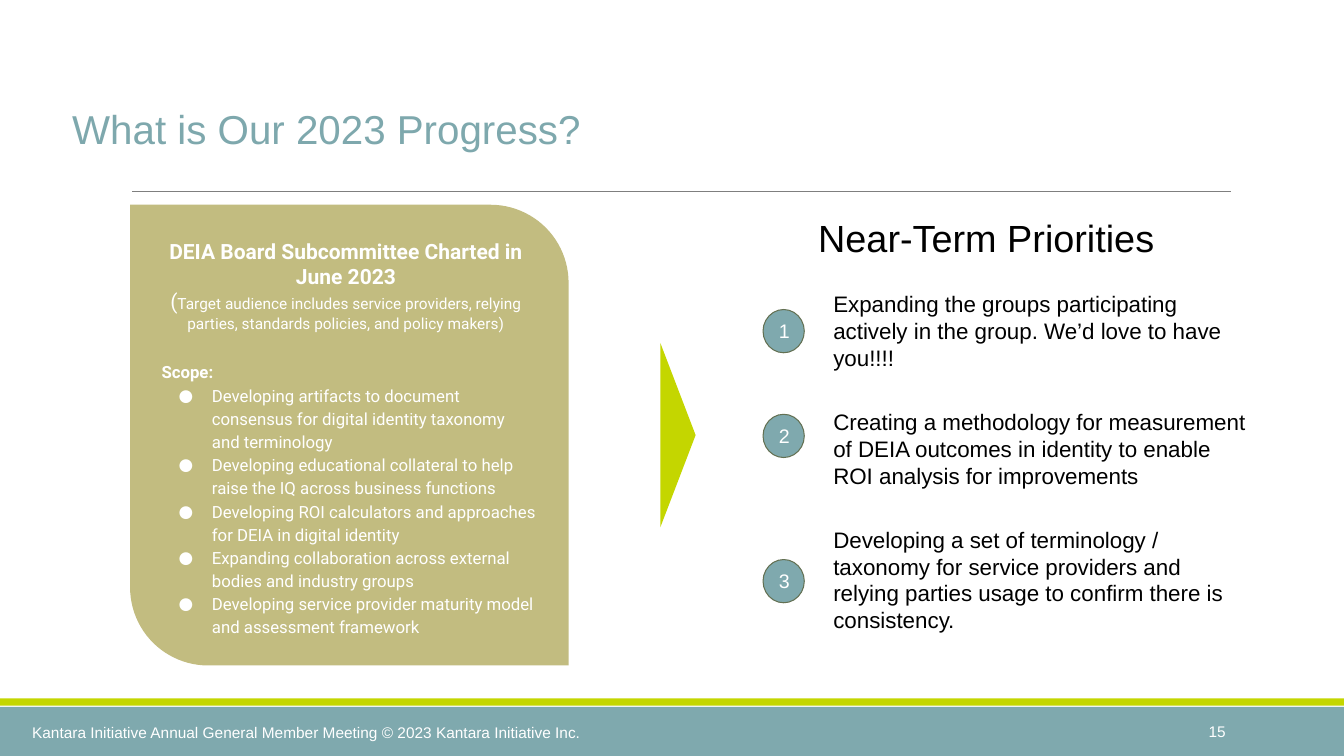
from dataclasses import dataclass

from lxml import etree
from pptx import Presentation
from pptx import util as u
from pptx.dml import color
from pptx.enum import shapes, text
from pptx.oxml import ns


@dataclass(frozen=True)
class Theme:
    """Colours, fonts and type sizes of the slide."""
    teal: str = "7FA9AE"
    title_teal: str = "7EA8AD"
    lime: str = "C4D600"
    sand: str = "C2BC80"
    olive: str = "637052"
    grey: str = "7F7F7F"
    white: str = "FFFFFF"
    black: str = "000000"
    sans: str = "Arial"
    card_font: str = "Roboto"
    title: float = 28.8
    heading: float = 27
    priority: float = 16
    card_heading: float = 15
    number: float = 14
    scope: float = 12
    small: float = 11


THEME = Theme()
ALIGN = text.PP_ALIGN
ANCHOR = text.MSO_ANCHOR
SCOPE = [
    "Developing artifacts to document consensus for digital identity taxonomy and terminology",
    "Developing educational collateral to help raise the IQ across business functions",
    "Developing ROI calculators and approaches for DEIA in digital identity",
    "Expanding collaboration across external bodies and industry groups",
    "Developing service provider maturity model and assessment framework",
]
PRIORITIES = [
    ("Expanding the groups participating actively in the group. We’d love to have you!!!!", 2.57, 0.74),
    ("Creating a methodology for measurement of DEIA outcomes in identity to enable "
     "ROI analysis for improvements", 2.57, 0.41),
    ("Developing a set of terminology / taxonomy for service providers and relying parties "
     "usage to confirm there is consistency.", 3.25, 1.1),
]


def apply(target, values):
    """Set every attribute named in the dict of values."""
    for name, value in values.items():
        setattr(target, name, value)


def inside(box, left, top, width, height):
    """Return a box in centimetres placed relative to another box."""
    return box[0] + left, box[1] + top, width, height


def lengths(box):
    """Turn a box in centimetres into slide lengths."""
    return [u.Cm(value) for value in box]


def add_span(para, words, size, ink, face=THEME.sans, bold=False):
    """Append a formatted run to a paragraph."""
    span = para.add_run()
    span.text = words
    apply(span.font, {"size": u.Pt(size), "name": face, "bold": bold})
    span.font.color.rgb = color.RGBColor.from_string(ink)


def set_frame(shape, across=0.25, down=0.25, anchor=ANCHOR.TOP):
    """Set wrapping, margins and anchor, and return the first paragraph."""
    frame = shape.text_frame
    apply(frame, {
        "word_wrap": True, "auto_size": text.MSO_AUTO_SIZE.NONE, "vertical_anchor": anchor,
        "margin_left": u.Cm(across), "margin_right": u.Cm(across),
        "margin_top": u.Cm(down), "margin_bottom": u.Cm(down),
    })
    return frame.paragraphs[0]


def place(shape, box):
    """Move a placeholder to the given box."""
    apply(shape, dict(zip(("left", "top", "width", "height"), lengths(box))))


def add_label(page, box, words, size, ink, **frame_values):
    """Add a text box with one formatted line and return its paragraph."""
    para = set_frame(page.shapes.add_textbox(*lengths(box)), **frame_values)
    add_span(para, words, size, ink)
    return para


def add_solid(page, kind, box, fill, outline=None):
    """Add a flat preset shape."""
    shape = page.shapes.add_shape(kind, *lengths(box))
    shape.shadow.inherit = False
    shape.fill.solid()
    shape.fill.fore_color.rgb = color.RGBColor.from_string(fill)
    if outline:
        shape.line.color.rgb = color.RGBColor.from_string(outline)
        shape.line.width = u.Pt(0.75)
    else:
        shape.line.fill.background()
    return shape


def set_bullet(para, bullet=None):
    """Give a paragraph a hanging white bullet, or none."""
    props = para._p.get_or_add_pPr()
    props.set("marL", str(u.Cm(1.27 if bullet else 0)))
    props.set("indent", str(u.Cm(-0.84 if bullet else 0)))
    if not bullet:
        etree.SubElement(props, ns.qn("a:buNone"))
        return
    tint = etree.SubElement(props, ns.qn("a:buClr"))
    etree.SubElement(tint, ns.qn("a:srgbClr"), val=THEME.white)
    etree.SubElement(props, ns.qn("a:buFont"), typeface=THEME.card_font)
    etree.SubElement(props, ns.qn("a:buChar"), char=bullet)


def draw_footer(page, box):
    """Draw the bottom band with its stripe, copyright line and page number."""
    width = box[2]
    add_solid(page, shapes.MSO_SHAPE.RECTANGLE, inside(box, 0, 0.21, width, 1.24), THEME.teal)
    add_solid(page, shapes.MSO_SHAPE.RECTANGLE, inside(box, 0, 0, width, 0.18), THEME.lime)
    add_label(page, inside(box, 0.56, 0.48, 15, 0.74),
              "Kantara Initiative Annual General Member Meeting © 2023 Kantara Initiative Inc.",
              THEME.small, THEME.white, down=0.13)
    number = add_label(page, inside(box, 27.51, 0.33, 3.63, 1.02), "15",
                       THEME.small, THEME.white, down=0.13, anchor=ANCHOR.MIDDLE)
    number.alignment = ALIGN.RIGHT


def draw_title(page, box):
    """Fill the title placeholder and draw the rule below it."""
    title = page.shapes.title
    place(title, box)
    para = set_frame(title, down=0.13, anchor=ANCHOR.BOTTOM)
    apply(para, {"alignment": ALIGN.LEFT, "line_spacing": 0.85})
    add_span(para, "What is Our 2023 Progress?", THEME.title, THEME.title_teal)
    left, top, width, _ = lengths(inside(box, 1.76, 2.8, 27.68, 0))
    rule = page.shapes.add_connector(shapes.MSO_CONNECTOR.STRAIGHT, left, top, left + width, top)
    rule.line.color.rgb = color.RGBColor.from_string(THEME.grey)
    rule.line.width = u.Pt(0.75)
    etree.SubElement(rule.element.spPr, ns.qn("a:effectLst"))


def draw_scope_card(page, box):
    """Draw the subcommittee card with its heading and scope list."""
    card = add_solid(page, shapes.MSO_SHAPE.ROUND_2_DIAG_RECTANGLE, box, THEME.sand)
    card.adjustments[0], card.adjustments[1] = 0, 0.178

    heading = page.shapes.add_textbox(*lengths(inside(box, 0.46, 0.51, 9.96, 2.24)))
    para = set_frame(heading, across=0.33, down=0.33)
    para.alignment = ALIGN.CENTER
    add_span(para, "DEIA Board Subcommittee Charted in June 2023",
             THEME.card_heading, THEME.white, THEME.card_font, True)
    para = heading.text_frame.add_paragraph()
    para.alignment = ALIGN.CENTER
    add_span(para, "(", THEME.card_heading, THEME.white, THEME.card_font)
    add_span(para, "Target audience includes service providers, relying parties, "
             "standards policies, and policy makers)", THEME.small, THEME.white, THEME.card_font)

    body = page.placeholders[1]
    place(body, inside(box, 0.46, 3.56, 10.13, 6.99))
    heading.element.addnext(body.element)
    para = set_frame(body, across=0.33, down=0.33)
    for index, words in enumerate(["Scope:"] + SCOPE):
        if index:
            para = body.text_frame.add_paragraph()
        apply(para, {"alignment": ALIGN.LEFT, "line_spacing": 1.15, "space_before": u.Pt(0)})
        set_bullet(para, "●" if index else None)
        add_span(para, words, THEME.scope, THEME.white, THEME.card_font, index == 0)


def draw_arrow(page, box):
    """Draw the triangle that points from the card to the priorities."""
    arrow = add_solid(page, shapes.MSO_SHAPE.ISOSCELES_TRIANGLE, box, THEME.lime)
    arrow.rotation = 90


def draw_priorities(page, box):
    """Draw the heading and the numbered near-term priorities."""
    add_label(page, inside(box, 1.14, 0, 11.81, 1.68), "Near-Term Priorities",
              THEME.heading, THEME.black)
    for index, (words, height, drop) in enumerate(PRIORITIES):
        top = 1.9 + 2.97 * index
        badge = add_solid(page, shapes.MSO_SHAPE.OVAL, inside(box, 0, top + drop, 1.04, 1.09),
                          THEME.teal, THEME.olive)
        para = set_frame(badge, anchor=ANCHOR.MIDDLE)
        para.alignment = ALIGN.CENTER
        add_span(para, str(index + 1), THEME.number, THEME.white)
        add_label(page, inside(box, 1.52, top, 11.05, height), words, THEME.priority, THEME.black)


def main():
    """Build the progress slide and save the deck."""
    deck = Presentation()
    apply(deck, {"slide_width": u.Cm(33.87), "slide_height": u.Cm(19.05)})
    page = deck.slides.add_slide(deck.slide_layouts[1])
    draw_footer(page, (0, 17.6, 33.87, 1.45))
    draw_title(page, (1.57, 2.03, 27.94, 1.96))
    draw_scope_card(page, (3.28, 5.16, 11.05, 11.61))
    draw_arrow(page, (14.76, 10.52, 4.65, 0.89))
    draw_priorities(page, (19.23, 5.16, 12.95, 11.1))
    deck.save("out.pptx")


if __name__ == "__main__":
    main()
